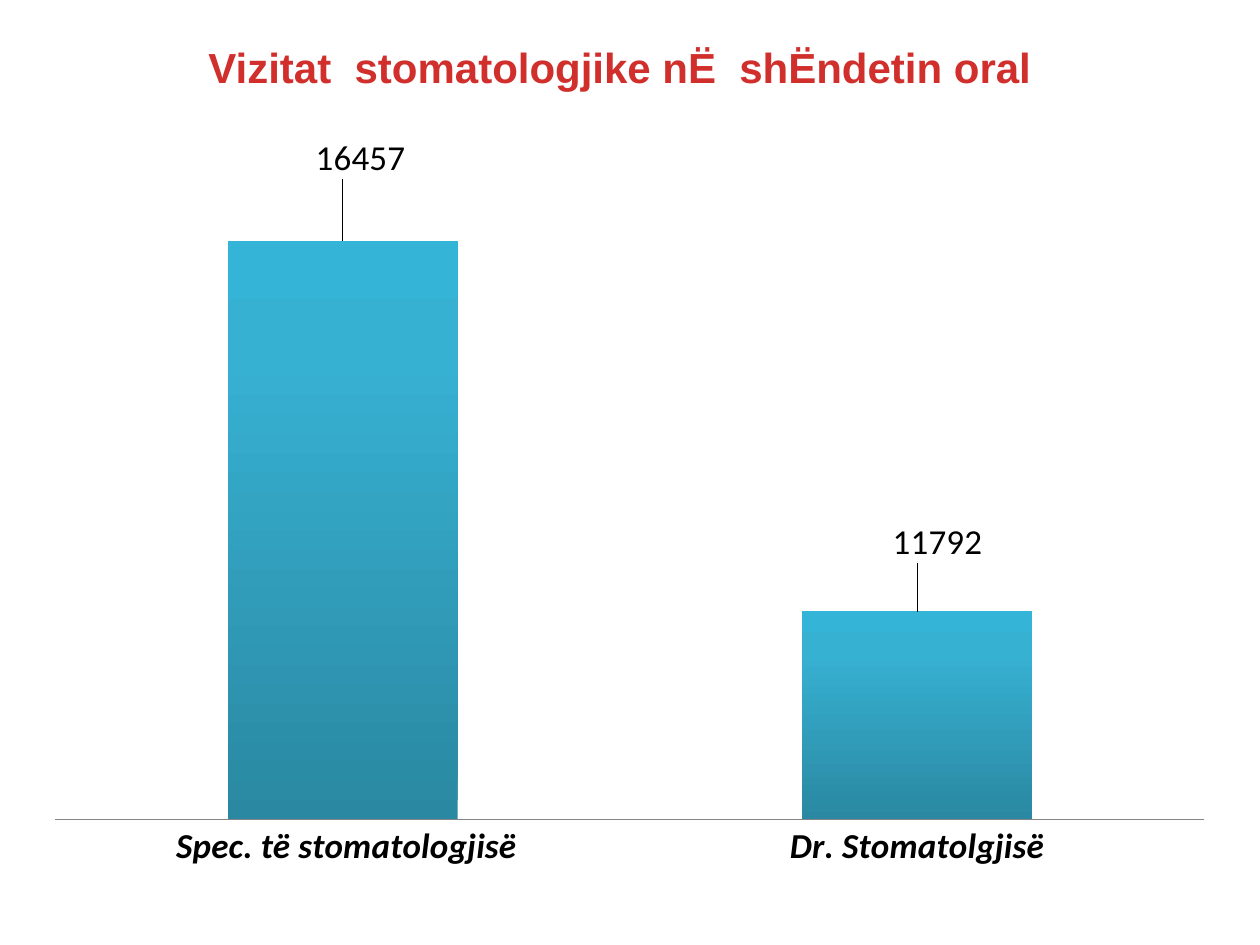
from lxml.etree import SubElement
from pptx import Presentation
from pptx.chart.data import CategoryChartData
from pptx.dml.color import RGBColor
from pptx.enum.chart import XL_CHART_TYPE, XL_LABEL_POSITION, XL_TICK_MARK
from pptx.enum.text import MSO_ANCHOR, PP_ALIGN
from pptx.oxml import parse_xml
from pptx.oxml.ns import nsdecls, qn
from pptx.util import Inches, Pt

RED = RGBColor(0xD0, 0x2F, 0x2C)
BLACK = RGBColor(0, 0, 0)
GRAY = RGBColor(0x86, 0x86, 0x86)

TITLE = "Vizitat  stomatologjike nË  shËndetin oral"
# category, bar value, label, label shift as a share of the chart
BARS = [
    (" Spec. të stomatologjisë", 7200, "16457", (0.015, -0.076)),
    ("Dr. Stomatolgjisë", 6300, "11792", (0.017, -0.057)),
]
LOW, HIGH = 5794, 7390
STOPS = [(0, "2A88A2"), (80, "37B1D2"), (100, "34B4D6")]
PLOT = {"x": 0.02, "y": 0.036, "w": 0.96, "h": 0.88}
NO_LEADERS = f"""<c:extLst {nsdecls('c')}>
  <c:ext uri="{{CE6537A1-D6FC-4f65-9D91-7224C49458BB}}"
    xmlns:c15="http://schemas.microsoft.com/office/drawing/2012/chart">
    <c15:showLeaderLines val="0"/>
  </c:ext>
</c:extLst>"""


def layout(parts):
    """Make a manual chart layout from (tag, value) pairs."""
    node = parse_xml(f"<c:layout {nsdecls('c')}><c:manualLayout/></c:layout>")
    for tag, val in parts:
        SubElement(node[0], qn(f"c:{tag}")).set("val", str(val))
    return node


def put_layout(node, spot, parts):
    """Replace the layout of a chart part."""
    for old in node.findall(qn("c:layout")):
        node.remove(old)
    node.insert(spot, layout(parts))


def shade(fill):
    """Fill with STOPS, running from bottom to top."""
    fill.gradient()
    fill.gradient_angle = 90
    box = fill._xPr.find(qn("a:gradFill")).find(qn("a:gsLst"))
    for old in list(box):
        box.remove(old)
    for pos, color in STOPS:
        stop = SubElement(box, qn("a:gs"))
        stop.set("pos", str(pos * 1000))
        SubElement(stop, qn("a:srgbClr")).set("val", color)


def add_title(slide):
    box = slide.shapes.add_textbox(Inches(0.17), Inches(0.42), Inches(9.5), Inches(0.62))
    frame = box.text_frame
    frame.word_wrap = True
    frame.vertical_anchor = MSO_ANCHOR.MIDDLE
    para = frame.paragraphs[0]
    para.alignment = PP_ALIGN.CENTER
    para.font.size = Pt(24)
    run = para.add_run()
    run.text = TITLE
    font = run.font
    font.name, font.size, font.bold = "Arial", Pt(24), True
    font.color.rgb = RED
    para.add_line_break()


def add_bars(slide):
    data = CategoryChartData()
    data.categories = [bar[0] for bar in BARS]
    data.add_series("Series 1", [bar[1] for bar in BARS])
    chart = slide.shapes.add_chart(
        XL_CHART_TYPE.COLUMN_CLUSTERED,
        Inches(0.25), Inches(1.08), Inches(9.5), Inches(5.92), data).chart
    chart.has_legend = chart.has_title = False
    chart.font.name, chart.font.size = "Calibri", Pt(10)
    chart.font.color.rgb = BLACK

    axis = chart.value_axis
    axis.minimum_scale, axis.maximum_scale = LOW, HIGH
    axis.has_major_gridlines = axis.visible = False
    axis = chart.category_axis
    axis.major_tick_mark = XL_TICK_MARK.NONE
    axis.format.line.color.rgb = GRAY
    axis.format.line.width = Pt(0.75)
    font = axis.tick_labels.font
    font.size, font.bold, font.italic = Pt(20), True, True

    modes = [("layoutTarget", "inner"), ("xMode", "edge"), ("yMode", "edge")]
    put_layout(chart._chartSpace.chart.plotArea, 0, modes + list(PLOT.items()))

    plot = chart.plots[0]
    plot.gap_width = 150
    plot.vary_by_categories = False
    series = plot.series[0]
    labels = series.data_labels
    labels.show_value = True
    labels.font.size, labels.font.bold = Pt(20), True
    for i, (_, _, text, (dx, dy)) in enumerate(BARS):
        point = series.points[i]
        shade(point.format.fill)
        label = point.data_label
        run = label.text_frame.paragraphs[0].add_run()
        run.text = text
        run.font.size, run.font.bold = Pt(20), False
        run.font.color.rgb = BLACK
        label.position = XL_LABEL_POSITION.OUTSIDE_END
        put_layout(label._dLbl, 1, [("x", dx), ("y", dy)])
    node = labels._element
    for old in node.findall(qn("c:showLeaderLines")):
        node.remove(old)
    node.append(parse_xml(NO_LEADERS))


def main():
    deck = Presentation()
    deck.slide_width, deck.slide_height = Inches(10), Inches(7.5)
    slide = deck.slides.add_slide(deck.slide_layouts[6])
    add_title(slide)
    add_bars(slide)
    deck.save("out.pptx")


if __name__ == "__main__":
    main()
